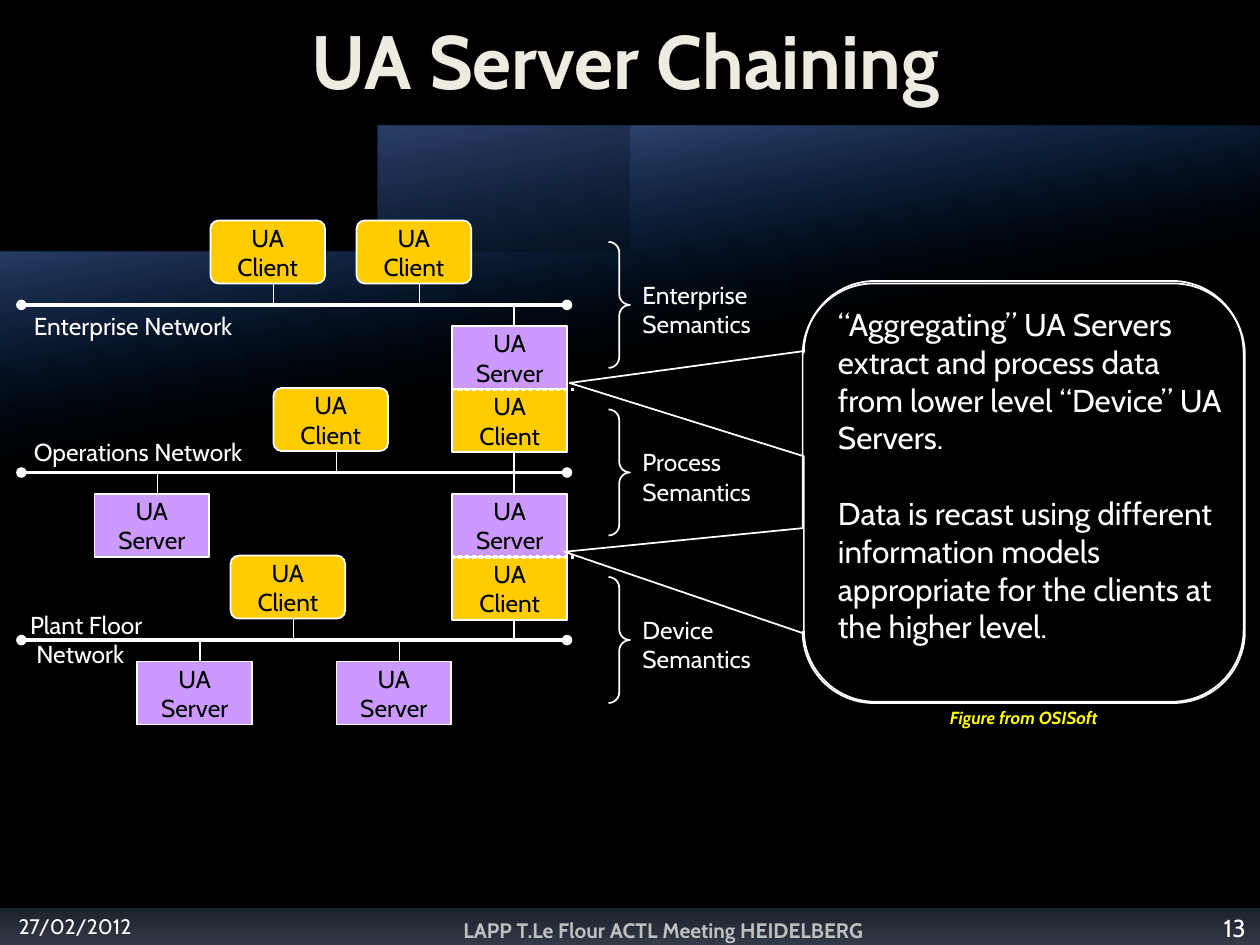
import copy

import lxml.etree
import pptx
import pptx.dml.color
import pptx.enum.dml
import pptx.enum.shapes
import pptx.enum.text
import pptx.oxml.ns
import pptx.util

Inches = pptx.util.Inches
Pt = pptx.util.Pt
Shape = pptx.enum.shapes.MSO_SHAPE
Align = pptx.enum.text.PP_ALIGN
Anchor = pptx.enum.text.MSO_ANCHOR
qn = pptx.oxml.ns.qn


def rgb(value):
    return pptx.dml.color.RGBColor.from_string(value)


class SlideBuilder:
    font = "Cabin"
    ink = "FFFFFF"
    client_fill = "FFCC00"
    server_fill = "CC99FF"
    insets = (0.1, 0.05, 0.1, 0.05)

    def __init__(self, slide):
        self.slide = slide
        self.shapes = slide.shapes

    def background(self, color):
        fill = self.slide.background.fill
        fill.solid()
        fill.fore_color.rgb = rgb(color)

    def set_text(self, frame, paragraphs, size, color, align=Align.LEFT, anchor=Anchor.TOP,
                 insets=insets, bold=False, italic=False, gap=0, hanging=0):
        frame.word_wrap = True
        frame.auto_size = pptx.enum.text.MSO_AUTO_SIZE.NONE
        frame.vertical_anchor = anchor
        (frame.margin_left, frame.margin_top,
         frame.margin_right, frame.margin_bottom) = map(Inches, insets)
        for index, text in enumerate(paragraphs):
            para = frame.add_paragraph() if index else frame.paragraphs[0]
            para.alignment = align
            if index:
                para.space_before = Pt(gap)
            if hanging:
                properties = para._p.get_or_add_pPr()
                properties.set("marL", str(Inches(hanging)))
                properties.set("indent", str(-Inches(hanging)))
            for number, line in enumerate(text.split("\n")):
                if number:
                    para.add_line_break()
                    para._p[-1].append(copy.deepcopy(span._r.rPr))
                span = para.add_run()
                span.text = line
                span.font.name = self.font
                span.font.size = Pt(size)
                span.font.bold = bold
                span.font.italic = italic
                span.font.color.rgb = rgb(color)

    def title(self, text, left, top, width, height):
        title = self.shapes.title
        self.shapes.element.append(title.element)
        title.left, title.top = Inches(left), Inches(top)
        title.width, title.height = Inches(width), Inches(height)
        self.set_text(title.text_frame, [text], 43.2, "EEECE1", Align.CENTER, Anchor.BOTTOM,
                      (0, 0.01, 0, 0.01), bold=True)

    def text(self, paragraphs, left, top, width, height, size=14, color=ink, **style):
        box = self.shapes.add_textbox(Inches(left), Inches(top), Inches(width), Inches(height))
        self.set_text(box.text_frame, paragraphs, size, color, **style)

    def gradient(self, shape, colors, stop, angle, alphas=()):
        shape.shadow.inherit = False
        shape.fill.gradient()
        shape.fill.gradient_angle = angle
        for mark, color, position in zip(shape.fill.gradient_stops, colors, (0, stop)):
            mark.color.rgb = rgb(color)
            mark.position = position
        for node, alpha in zip(list(shape.element.iter(qn("a:srgbClr"))), alphas):
            lxml.etree.SubElement(node, qn("a:alpha")).set("val", str(alpha * 1000))
        shape.line.fill.background()

    def wave(self, curve, bottom, colors, alphas):
        steps = 60
        points = []
        for step in range(steps + 1):
            t = step / steps
            weights = ((1 - t) ** 3, 3 * t * (1 - t) ** 2, 3 * t * t * (1 - t), t ** 3)
            points.append(tuple(sum(w * p[axis] for w, p in zip(weights, curve))
                                for axis in (0, 1)))
        builder = self.shapes.build_freeform(0, bottom, scale=Inches(1))
        builder.add_line_segments(points + [(10, bottom)], close=True)
        self.gradient(builder.convert_to_shape(), colors, 0.35, 280, alphas)

    def shape(self, kind, left, top, width, height, fill=None, adjustments=()):
        shape = self.shapes.add_shape(kind, Inches(left), Inches(top),
                                      Inches(width), Inches(height))
        shape.shadow.inherit = False
        for index, value in enumerate(adjustments):
            shape.adjustments[index] = value
        if fill:
            shape.fill.solid()
            shape.fill.fore_color.rgb = rgb(fill)
        else:
            shape.fill.background()
        shape.line.color.rgb = rgb(self.ink)
        shape.line.width = Pt(1)
        return shape

    def node(self, name, left, top, rounded=False):
        fill = self.client_fill if name == "Client" else self.server_fill
        kind = Shape.ROUNDED_RECTANGLE if rounded else Shape.RECTANGLE
        node = self.shape(kind, left, top, 0.91, 0.5, fill, (0.13,) if rounded else ())
        self.set_text(node.text_frame, ["UA\n" + name], 14, "000000", Align.CENTER,
                      Anchor.MIDDLE, (0, 0, 0, 0))

    def callout(self, left, top, width, height, tip_x, tip_y):
        offsets = ((tip_x - left) / width - 0.5, (tip_y - top) / height - 0.5, 0.17)
        self.shape(Shape.ROUNDED_RECTANGULAR_CALLOUT, left, top, width, height,
                   adjustments=offsets)

    def line(self, x1, y1, x2, y2, width=1, dotted=False, ovals=False):
        line = self.shapes.add_connector(pptx.enum.shapes.MSO_CONNECTOR.STRAIGHT,
                                         Inches(x1), Inches(y1), Inches(x2), Inches(y2))
        line.line.color.rgb = rgb(self.ink)
        line.line.width = Pt(width)
        if dotted:
            line.line.dash_style = pptx.enum.dml.MSO_LINE.ROUND_DOT
        if ovals:
            outline = line.element.spPr.find(qn("a:ln"))
            for end in ("a:headEnd", "a:tailEnd"):
                lxml.etree.SubElement(outline, qn(end)).set("type", "oval")
        lxml.etree.SubElement(line.element.spPr, qn("a:effectLst"))


def main():
    deck = pptx.Presentation()
    deck.slide_width, deck.slide_height = Inches(10), Inches(7.5)
    page = SlideBuilder(deck.slides.add_slide(deck.slide_layouts[5]))

    page.background("000000")
    bar = page.shape(Shape.RECTANGLE, 0, 7.21, 10, 0.29)
    page.gradient(bar, ("1D222B", "323A48"), 1, 270)
    page.wave(((0, 1.8), (5, 1.8), (5.34, -0.28), (10, 0.92)), 7,
              ("7C9FFF", "00469C"), (55, 0))
    page.wave(((0, 2.13), (5, 2.13), (5.98, 0.31), (10, 1.47)), 6.37,
              ("A5BDFF", "00469C"), (30, 0))
    page.title("UA Server Chaining", 1.38, 0.08, 7.17, 0.76)

    footer = {"align": Align.CENTER, "anchor": Anchor.BOTTOM}
    page.text(["27/02/2012"], 0, 7.1, 1.19, 0.4, 12, **footer)
    page.text(["LAPP T.Le Flour ACTL Meeting HEIDELBERG"], 1.77, 7.13, 7.09, 0.4, 12,
              "BFBFBF", bold=True, insets=(0, 0.05, 0.1, 0.05), **footer)
    page.text(["13"], 9.46, 7.13, 0.58, 0.4, 14, insets=(0.1, 0.05, 0, 0.05), **footer)

    levels = [2.42 + 1.33 * index for index in range(3)]
    for level in levels[:2]:
        page.node("Server", 3.59, level + 0.17)
        page.line(4.08, level, 4.08, level + 0.17)
        page.node("Client", 3.59, level + 0.67)
        page.line(4.08, level + 1.17, 4.08, level + 1.33)
        page.line(3.58, level + 0.67, 4.58, level + 0.67, width=2, dotted=True)

    for level, name in zip(levels, ("Enterprise", "Process", "Device")):
        page.line(4.5, level, 0.17, level, width=2, ovals=True)
        page.shape(Shape.RIGHT_BRACE, 4.83, level - 0.5, 0.17, 1, adjustments=(0.5, 0.5))
        page.text([name + "\nSemantics"], 5, level - 0.25, 1.11, 0.57)

    for left, row in ((2.67, 2), (1.09, 2), (0.75, 1)):
        page.node("Server", left, levels[row] + 0.17)
        page.line(left + 0.5, levels[row], left + 0.5, levels[row] + 0.17)
    for left, row in ((1.83, 2), (2.83, 0), (1.67, 0), (2.17, 1)):
        page.node("Client", left, levels[row] - 0.67, rounded=True)
        page.line(left + 0.5, levels[row] - 0.17, left + 0.5, levels[row])

    page.text(["Enterprise Network"], 0.17, 2.42, 1.85, 0.33)
    page.text(["Operations Network"], 0.17, 3.42, 1.91, 0.33)
    page.text(["Plant Floor\nNetwork"], 0.14, 4.79, 1.14, 0.57, hanging=0.05)

    page.callout(6.38, 2.23, 3.49, 3.34, 4.52, 3.04)
    page.text(["“Aggregating” UA Servers extract and process data from lower level "
               "“Device” UA Servers.",
               "Data is recast using different information models appropriate for the "
               "clients at the higher level."],
              6.65, 2.42, 3.12, 2.99, 18, insets=(0, 0, 0, 0), gap=21.6)
    page.callout(6.37, 2.25, 3.51, 3.33, 4.48, 4.38)
    page.text(["Figure from OSISoft"], 7.44, 5.56, 1.47, 0.28, 10, "FFFF00",
              bold=True, italic=True)

    deck.save("out.pptx")


if __name__ == "__main__":
    main()
